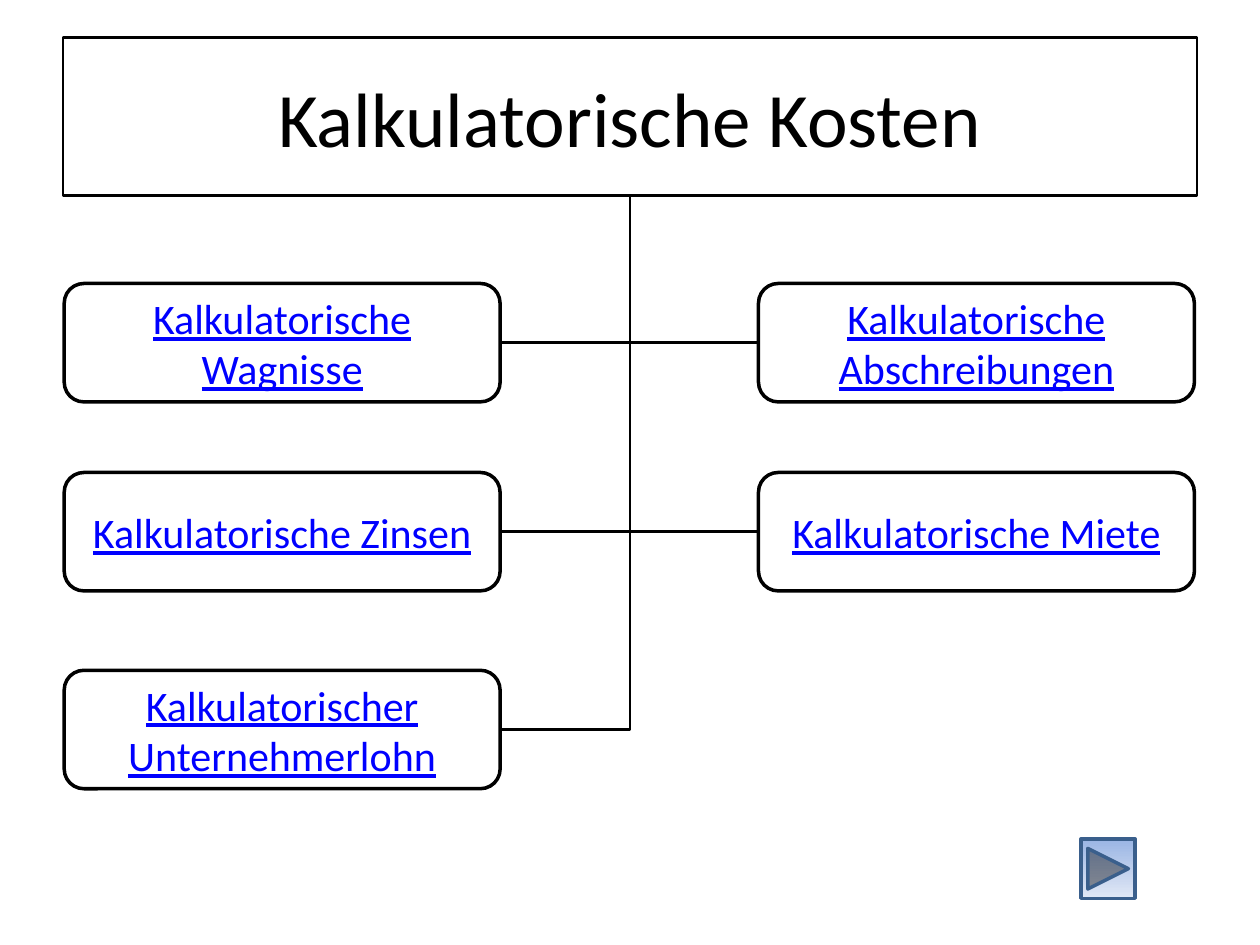
from dataclasses import dataclass

from lxml import etree
from pptx import Presentation
from pptx import util as u
from pptx.dml.color import RGBColor
from pptx.enum import shapes, text
from pptx.oxml.ns import qn


@dataclass(frozen=True)
class Theme:
    font: str = "Calibri"
    ink: str = "000000"
    paper: str = "FFFFFF"
    link: str = "0000FF"
    button_top: str = "9AB5E4"
    button_bottom: str = "E1E8F5"
    button_line: str = "3A5F8C"
    title_size: int = 44
    box_size: int = 24
    thin: float = 1.5
    thick: float = 2


@dataclass(frozen=True)
class CostBox:
    label: str
    on_right: bool
    top: float


THEME = Theme()
TRUNK_X, TRUNK_TOP = 5, 1.55
BOX_WIDTH, BOX_HEIGHT = 3.46, 0.94
LEFT_X, RIGHT_X = 0.51, 6.02
ROWS = (2.25, 3.75, 5.32)

BOXES = (
    CostBox("Kalkulatorische Wagnisse", False, ROWS[0]),
    CostBox("Kalkulatorische Abschreibungen", True, ROWS[0]),
    CostBox("Kalkulatorische Zinsen", False, ROWS[1]),
    CostBox("Kalkulatorische Miete", True, ROWS[1]),
    CostBox("Kalkulatorischer Unternehmerlohn", False, ROWS[2]),
)


def set_line(shape, color: str, width: float) -> None:
    shape.line.color.rgb = RGBColor.from_string(color)
    shape.line.width = u.Pt(width)


def write_text(shape, content: str, *, size: int, color: str,
               underline: bool = False) -> None:
    frame = shape.text_frame
    frame.word_wrap = True
    frame.vertical_anchor = text.MSO_ANCHOR.MIDDLE
    paragraph = frame.paragraphs[0]
    paragraph.alignment = text.PP_ALIGN.CENTER
    run = paragraph.add_run()
    run.text = content
    run.font.name = THEME.font
    run.font.size = u.Pt(size)
    run.font.underline = underline
    run.font.color.rgb = RGBColor.from_string(color)


def add_title(slide, content: str) -> None:
    title = slide.shapes.title
    title.left, title.top = u.Inches(0.5), u.Inches(0.3)
    title.width, title.height = u.Inches(9), u.Inches(1.25)
    set_line(title, THEME.ink, THEME.thin)
    write_text(title, content, size=THEME.title_size, color=THEME.ink)


def add_box(slide, box: CostBox) -> None:
    shape = slide.shapes.add_shape(
        shapes.MSO_SHAPE.ROUNDED_RECTANGLE,
        u.Inches(RIGHT_X if box.on_right else LEFT_X), u.Inches(box.top),
        u.Inches(BOX_WIDTH), u.Inches(BOX_HEIGHT))
    shape.shadow.inherit = False
    shape.fill.solid()
    shape.fill.fore_color.rgb = RGBColor.from_string(THEME.paper)
    set_line(shape, THEME.ink, THEME.thick)
    write_text(shape, box.label, size=THEME.box_size, color=THEME.link, underline=True)


def add_branch(slide, box: CostBox) -> None:
    """Run down the trunk, then sideways to the inner edge of the box."""
    end_x = RIGHT_X if box.on_right else LEFT_X + BOX_WIDTH
    drop = box.top + BOX_HEIGHT / 2 - TRUNK_TOP
    reach = abs(end_x - TRUNK_X)
    # The frame is turned a quarter around its centre, so drop is its width
    left = (TRUNK_X + end_x - drop) / 2
    top = TRUNK_TOP + (drop - reach) / 2
    connector = slide.shapes.add_connector(
        shapes.MSO_CONNECTOR.ELBOW, u.Inches(left), u.Inches(top),
        u.Inches(left + drop), u.Inches(top + reach))
    set_line(connector, THEME.ink, THEME.thin)
    properties = connector._element.spPr
    properties.find(qn("a:prstGeom")).set("prst", "bentConnector2")
    frame = properties.find(qn("a:xfrm"))
    frame.set("rot", str((270 if box.on_right else 90) * 60000))
    if box.on_right:
        frame.set("flipH", "1")
    etree.SubElement(properties, qn("a:effectLst"))


def add_next_button(slide) -> None:
    button = slide.shapes.add_shape(
        shapes.MSO_SHAPE.ACTION_BUTTON_FORWARD_OR_NEXT,
        u.Inches(8.58), u.Inches(6.66), u.Inches(0.43), u.Inches(0.47))
    button.shadow.inherit = False
    button.fill.gradient()
    button.fill.gradient_angle = 270
    colors = (THEME.button_top, THEME.button_bottom)
    for stop, color in zip(button.fill.gradient_stops, colors):
        stop.color.rgb = RGBColor.from_string(color)
    set_line(button, THEME.button_line, THEME.thick)


def main() -> None:
    presentation = Presentation()
    presentation.slide_width = u.Inches(10)
    presentation.slide_height = u.Inches(7.5)
    slide = presentation.slides.add_slide(presentation.slide_layouts[5])

    # Heading
    add_title(slide, "Kalkulatorische Kosten")

    # Cost types and their branches
    for box in BOXES:
        add_box(slide, box)
    for box in BOXES:
        add_branch(slide, box)

    # Navigation
    add_next_button(slide)

    presentation.save("out.pptx")


if __name__ == "__main__":
    main()
